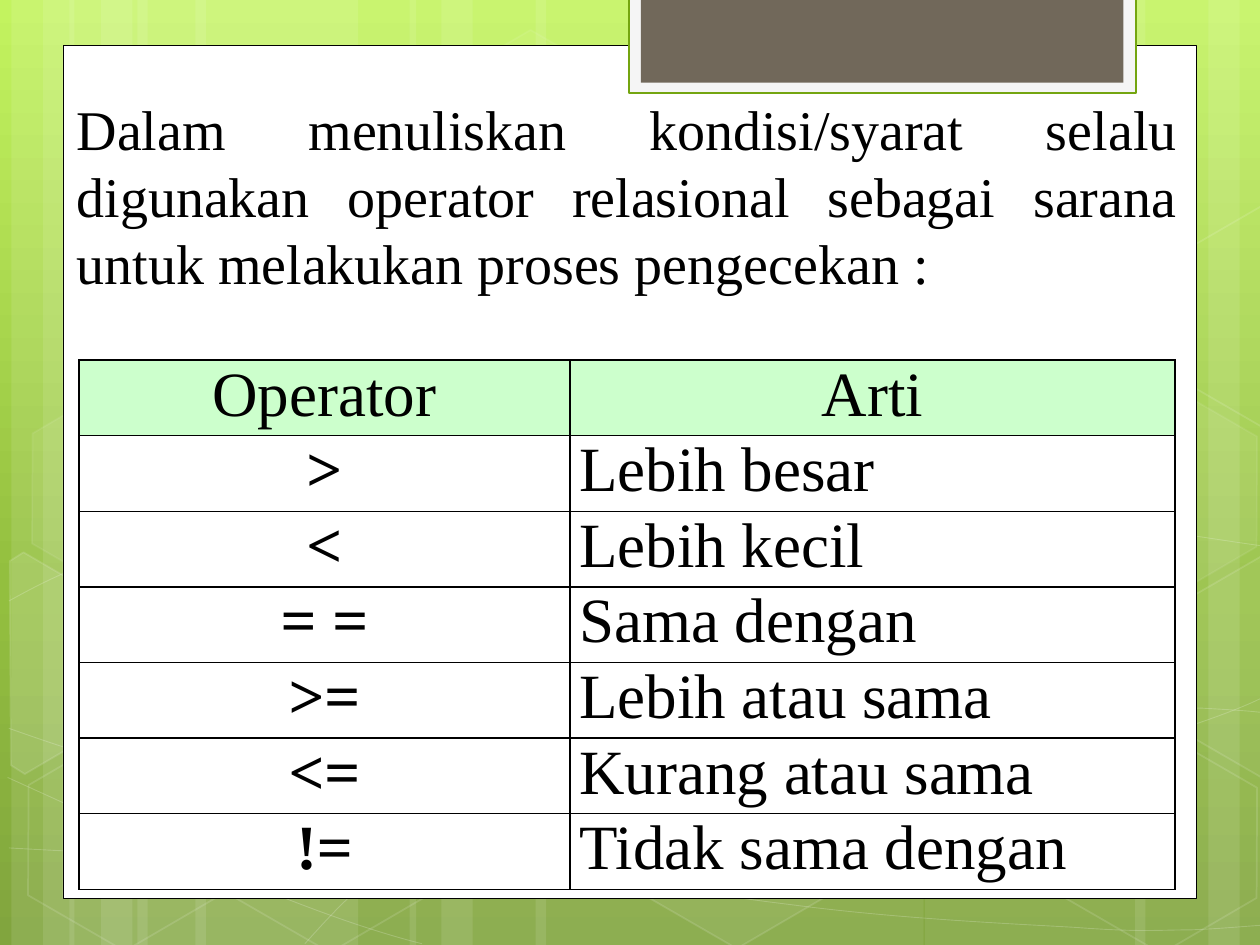
import pptx
import pptx.util
import pptx.dml.color
import pptx.enum.shapes
import pptx.enum.text
import pptx.oxml.ns
import math
from copy import deepcopy
from dataclasses import dataclass
from lxml import etree

Cm, Pt = pptx.util.Cm, pptx.util.Pt
RGB = pptx.dml.color.RGBColor.from_string
qn = pptx.oxml.ns.qn
MSO_SHAPE = pptx.enum.shapes.MSO_SHAPE
ALIGN = pptx.enum.text.PP_ALIGN


@dataclass(frozen=True)
class Theme:
    font: str = "Times New Roman"
    intro_size: int = 32
    table_size: int = 36
    text: str = "000000"
    white: str = "FFFFFF"
    header: str = "CCFFCC"
    tab_edge: str = "F5F5F5"
    tab_line: str = "74A510"
    tab: str = "71685A"
    background: tuple = ((0, "C3F35F"), (0.62, "93BF3F"), (1, "81A53E"))


THEME = Theme()

# Curves and cut hexagons are drawn on a grid ten units wide.
# A curve is its start followed by groups of three Bezier points.
CURVES = [
    [(0.07, 6.73), (0.61, 6.76), (1.15, 6.79), (1.9, 6.78), (2.65, 6.77), (3.58, 6.75),
     (4.58, 6.65), (5.58, 6.55), (7, 6.36), (7.92, 6.17), (8.83, 5.98), (9.77, 5.68),
     (10.07, 5.51)],
    [(0.07, 4.77), (0.36, 4.61), (0.65, 4.46), (1.21, 4.31), (1.78, 4.16), (2.59, 3.94),
     (3.47, 3.87), (4.36, 3.8), (5.44, 3.79), (6.54, 3.87), (7.64, 3.95), (9.47, 4.26),
     (10.07, 4.34)],
    [(0.06, 6.17), (1.27, 6.72), (2.47, 7.27), (3.35, 7.49)],
    [(0.07, 5.78), (0.38, 5.89), (0.7, 6), (1.28, 6.16), (1.86, 6.31), (2.73, 6.56),
     (3.57, 6.73), (4.4, 6.9), (5.45, 7.08), (6.28, 7.18), (7.11, 7.29), (8, 7.33),
     (8.53, 7.36), (9.06, 7.4), (9.19, 7.38), (9.45, 7.38), (9.71, 7.37), (9.89, 7.35),
     (10.07, 7.34)],
    [(2.42, 7.49), (2.6, 7.29), (2.78, 7.09), (3.02, 6.91), (3.26, 6.72), (3.6, 6.53),
     (3.88, 6.39), (4.16, 6.25), (4.33, 6.19), (4.69, 6.09), (5.06, 5.99), (5.73, 5.85),
     (6.08, 5.78), (6.44, 5.71), (6.49, 5.71), (6.8, 5.69), (7.11, 5.66), (7.6, 5.63),
     (7.94, 5.62), (8.29, 5.61), (8.86, 5.62), (8.86, 5.62), (9.08, 5.62), (9.31, 5.62),
     (9.53, 5.62), (9.71, 5.63), (9.88, 5.64), (9.97, 5.65), (10.06, 5.66), (10.03, 5.65),
     (10.06, 5.66)],
]
# left and top in cm, fill and line opacity in percent
HEXAGONS = [
    (8.48, 0.91, 4, 8), (12.62, 14.96, 6, 12), (0.28, 15.01, 0, 12), (0.36, 7.92, 7, 8),
    (4.42, 15.04, 0, 12), (19.13, 11.51, 10, 12), (21.18, 15.06, 0, 12), (21.18, 7.98, 7, 8),
]
# centre, corners, fill opacity in percent
CUT_HEXAGONS = [
    ((0.36, 5.36), [(0.08, 4.45), (0.19, 4.38), (0.96, 4.83), (0.95, 5.7), (0.2, 6.14),
                    (0.09, 6.07)], 10),
    ((9.85, 5.2), [(9.26, 4.85), (10.02, 4.41), (10.09, 4.46), (10.09, 6.13),
                   (10.02, 6.17), (9.26, 5.73)], 4),
    ((9.85, 2.41), [(9.26, 2.07), (10.02, 1.63), (10.1, 1.68), (10.09, 3.35),
                    (10.02, 3.39), (9.26, 2.95)], 0),
]
TILT = 30
INTRO = ("Dalam menuliskan kondisi/syarat selalu digunakan operator relasional "
         "sebagai sarana untuk melakukan proses pengecekan :")
OPERATORS = [
    ("Operator", "Arti"), (">", "Lebih besar"), ("<", "Lebih kecil"),
    ("= =", "Sama dengan"), (">=", "Lebih atau sama"), ("<=", "Kurang atau sama"),
    ("!=", "Tidak sama dengan"),
]


def paint(sp, fill=None, line=None, width=1, fill_alpha=100, line_alpha=100):
    """Set fill, line and their opacity in percent; None leaves either out."""
    sp.shadow.inherit = False
    for part, color in ((sp.fill, fill), (sp.line.fill, line)):
        if color:
            part.solid()
            part.fore_color.rgb = RGB(color)
        else:
            part.background()
    if line:
        sp.line.width = Pt(width)
    for tag, alpha in (("a:solidFill", fill_alpha), ("a:ln/a:solidFill", line_alpha)):
        for clr in sp._element.spPr.xpath(f"{tag}/a:srgbClr"):
            if alpha < 100:
                etree.SubElement(clr, qn("a:alpha"), val=str(alpha * 1000))


def add_box(s, x, y, w, h, kind=MSO_SHAPE.RECTANGLE, **look):
    sp = s.shapes.add_shape(kind, x, y, w, h)
    paint(sp, **look)
    return sp


def add_outline(s, box, points, close, **look):
    x, y, w, _ = box
    unit = w / 10
    pts = [(x + px * unit, y + py * unit) for px, py in points]
    builder = s.shapes.build_freeform(*pts[0], scale=1.0)
    builder.add_line_segments(pts[1:], close=close)
    sp = builder.convert_to_shape()
    paint(sp, **look)
    return sp


def bend(sp):
    """Turn every three straight segments into one Bezier segment."""
    lines = list(sp._element.iter(qn("a:lnTo")))
    for i in range(0, len(lines), 3):
        curve = etree.Element(qn("a:cubicBezTo"))
        lines[i].addprevious(curve)
        for line in lines[i:i + 3]:
            curve.append(line[0])
            line.getparent().remove(line)


def turn(points, centre, degrees):
    cx, cy = centre
    c, n = math.cos(math.radians(degrees)), math.sin(math.radians(degrees))
    return [(cx + (px - cx) * c - (py - cy) * n, cy + (px - cx) * n + (py - cy) * c)
            for px, py in points]


def add_background(s):
    fill = s.background.fill
    fill.gradient()
    fill.gradient_angle = 270
    stop_list = s._element.find(".//" + qn("a:gsLst"))
    stop_list.insert(1, deepcopy(stop_list[0]))
    for stop, (position, color) in zip(fill.gradient_stops, THEME.background):
        stop.position = position
        stop.color.rgb = RGB(color)


def add_bands(s, box):
    """Four trios of translucent stripes; the third mirrors the others."""
    x, y, w, h = box
    for start, wide, mirrored in ((0.23, 4.45, False), (1.4, 4.45, False),
                                  (-0.23, 4.45, True), (8.26, 7.82, False)):
        for offset, width in ((2.54, wide), (0, 1.27), (0.64, 2.11)):
            left = Cm(start + offset)
            if mirrored:
                left = w - left - Cm(width)
            sp = add_box(s, x + left, y, Cm(width), h, fill=THEME.white, fill_alpha=10)
            sp.rotation = 180 if mirrored else 0


def add_pattern(s, box):
    x, y, _, _ = box
    white = THEME.white
    for nodes in CURVES:
        bend(add_outline(s, box, nodes, False, line=white, width=0.5, line_alpha=20))
    for left, top, fill_alpha, line_alpha in HEXAGONS:
        sp = add_box(s, x + Cm(left), y + Cm(top), Cm(4.45), Cm(3.86), MSO_SHAPE.HEXAGON,
                     fill=white if fill_alpha else None, line=white,
                     fill_alpha=fill_alpha, line_alpha=line_alpha)
        sp.adjustments[0] = 0.285
        sp.rotation = TILT
    for centre, points, fill_alpha in CUT_HEXAGONS:
        sp = add_outline(s, box, turn(points, centre, -TILT), True,
                         fill=white if fill_alpha else None, line=white,
                         fill_alpha=fill_alpha, line_alpha=12)
        sp.rotation = TILT


def add_panel(s, x, y, w, h):
    """White panel with the tab that hangs over its top edge."""
    add_box(s, x, y, w, h, fill=THEME.white, line=THEME.text, width=0.5)
    top = y - Cm(0.97)
    add_box(s, x + Cm(11.41), top, Cm(10.22), Cm(1.94),
            fill=THEME.tab_edge, line=THEME.tab_line, width=1.25)
    add_box(s, x + Cm(11.65), top, Cm(9.73), Cm(1.73), fill=THEME.tab)


def set_text(tf, text, size, align, bold=False):
    tf.text = text
    p = tf.paragraphs[0]
    p.alignment = align
    p.font.name, p.font.size, p.font.bold = THEME.font, Pt(size), bold
    p.font.color.rgb = RGB(THEME.text)


def add_intro(s, x, y, w, h):
    sp = s.shapes.title
    sp._element.getparent().append(sp._element)  # in front of the panel
    sp.left, sp.top, sp.width, sp.height = x, y, w, h
    tf = sp.text_frame
    tf.word_wrap = True
    tf.auto_size = pptx.enum.text.MSO_AUTO_SIZE.NONE
    tf.vertical_anchor = pptx.enum.text.MSO_ANCHOR.MIDDLE
    set_text(tf, INTRO, THEME.intro_size, ALIGN.JUSTIFY)


def add_borders(cell):
    tc_pr = cell._tc.get_or_add_tcPr()
    for side in ("a:lnL", "a:lnR", "a:lnT", "a:lnB"):
        ln = etree.SubElement(tc_pr, qn(side), w=str(Pt(1)))
        etree.SubElement(etree.SubElement(ln, qn("a:solidFill")), qn("a:srgbClr"), val=THEME.text)


def add_operator_table(s, x, y, w, h):
    table = s.shapes.add_table(len(OPERATORS), 2, x, y, w, h).table
    table.horz_banding = False
    table.columns[0].width = Cm(9.9)
    table.columns[1].width = w - Cm(9.9)
    for i, row in enumerate(OPERATORS):
        for j, text in enumerate(row):
            cell = table.cell(i, j)
            cell.margin_left = cell.margin_right = Cm(0.19)
            cell.margin_top = cell.margin_bottom = 0
            add_borders(cell)
            if i == 0:
                cell.fill.solid()
                cell.fill.fore_color.rgb = RGB(THEME.header)
            else:
                cell.fill.background()
            set_text(cell.text_frame, text, THEME.table_size,
                     ALIGN.CENTER if i == 0 or j == 0 else ALIGN.JUSTIFY,
                     bold=i > 0 and j == 0)


def main():
    prs = pptx.Presentation()
    prs.slide_width, prs.slide_height = Cm(25.4), Cm(19.05)
    s = prs.slides.add_slide(prs.slide_layouts[5])
    page = (0, 0, prs.slide_width, prs.slide_height)
    add_background(s)
    add_bands(s, page)
    add_pattern(s, page)
    add_panel(s, Cm(1.27), Cm(0.91), Cm(22.86), Cm(17.2))
    add_intro(s, Cm(1.29), Cm(1.75), Cm(22.71), Cm(4.37))
    add_operator_table(s, Cm(1.59), Cm(7.26), Cm(22.1), Cm(10.67))
    prs.save("out.pptx")


if __name__ == "__main__":
    main()
